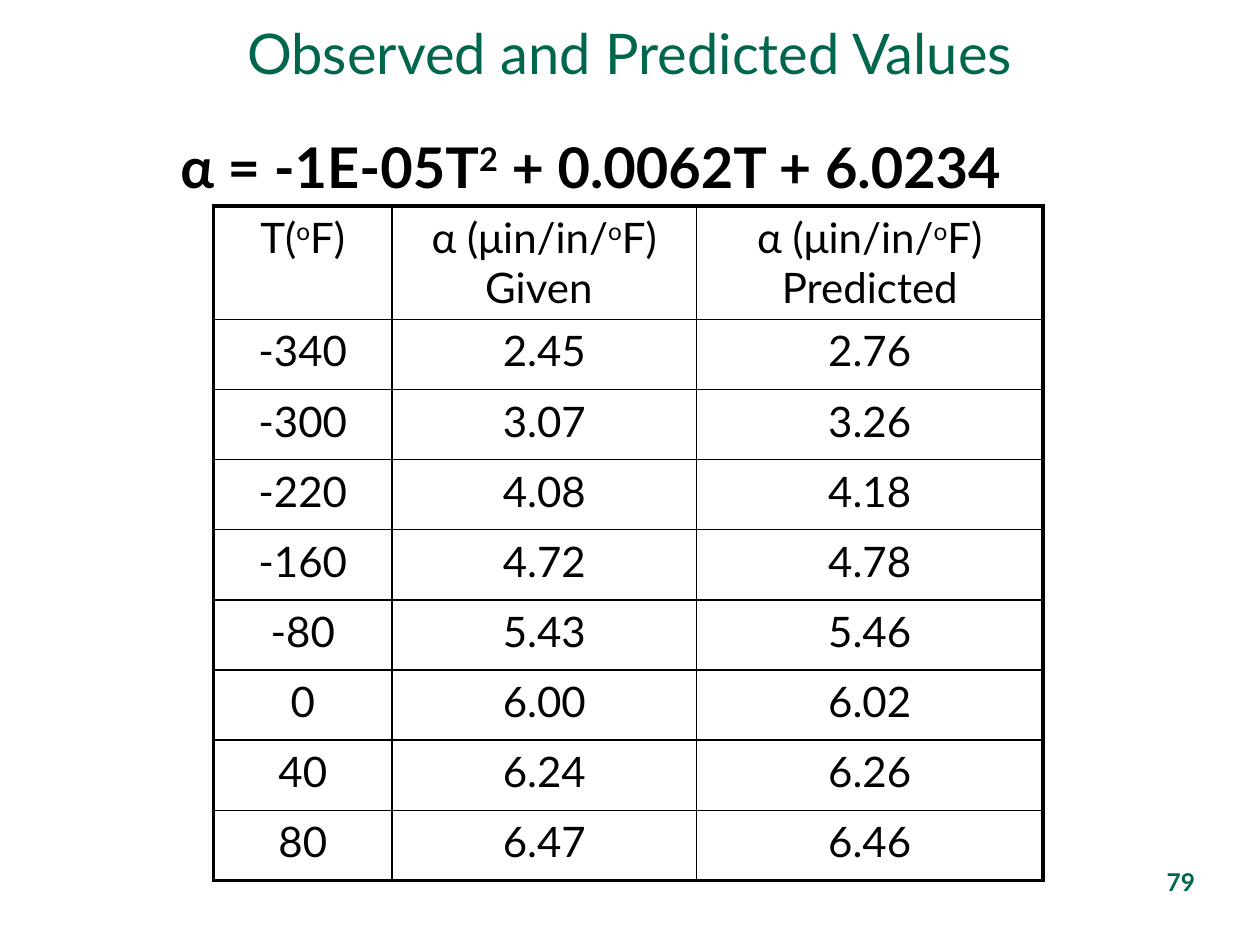
from dataclasses import dataclass

from lxml.etree import SubElement
from pptx import Presentation
from pptx.dml.color import RGBColor
from pptx.enum.text import MSO_ANCHOR, PP_ALIGN
from pptx.oxml.ns import qn
from pptx.util import Pt

TITLE = "Observed and Predicted Values"
EQUATION = [("α = -1E-05T", False), ("2", True), (" + 0.0062T + 6.0234", False)]
EXPANSION_UNIT = [("α (μin/in/", False), ("o", True), ("F)", False)]
HEADERS = [
    [[("T(", False), ("o", True), ("F)", False)]],
    [EXPANSION_UNIT, [("Given ", False)]],
    [EXPANSION_UNIT, [("Predicted", False)]],
]
VALUES = [
    ("-340", "2.45", "2.76"),
    ("-300", "3.07", "3.26"),
    ("-220", "4.08", "4.18"),
    ("-160", "4.72", "4.78"),
    ("-80", "5.43", "5.46"),
    ("0", "6.00", "6.02"),
    ("40", "6.24", "6.26"),
    ("80", "6.47", "6.46"),
]
PAGE_NUMBER = "79"

TITLE_BOX = (36, 0, 648, 60)
EQUATION_BOX = (96, 72, 624, 45)
NUMBER_BOX = (600, 492, 90, 36)
TABLE_LEFT, TABLE_TOP = 122, 117.6
COLUMN_WIDTHS = (102, 174, 198)
HEADER_HEIGHT, ROW_HEIGHT = 64.8, 40.1


@dataclass(frozen=True)
class Theme:
    """Fonts, colours, type sizes and line widths of the slide."""

    font: str = "Lato"
    green: str = "00664D"
    black: str = "000000"
    heading_size: float = 32
    table_size: float = 24
    number_size: float = 14
    outer_line: float = 2.25
    inner_line: float = 1


THEME = Theme()


def write(paragraph, runs, size, color, bold=False, align=PP_ALIGN.LEFT):
    """Add (text, is_superscript) runs to a paragraph."""
    paragraph.alignment = align
    for text, superscript in runs:
        run = paragraph.add_run()
        run.text = text
        run.font.name = THEME.font
        run.font.size = Pt(size)
        run.font.bold = bold
        run.font.color.rgb = RGBColor.from_string(color)
        if superscript:
            run.font._element.set("baseline", "30000")


def add_title(slide):
    """Place and fill the title placeholder."""
    title = slide.shapes.title
    title.left, title.top, title.width, title.height = map(Pt, TITLE_BOX)
    title.text_frame.vertical_anchor = MSO_ANCHOR.MIDDLE
    write(title.text_frame.paragraphs[0], [(TITLE, False)], THEME.heading_size,
          THEME.green, align=PP_ALIGN.CENTER)


def add_text(slide, box, runs, size, color, align=PP_ALIGN.LEFT):
    """Add a bold one-paragraph text box."""
    frame = slide.shapes.add_textbox(*map(Pt, box)).text_frame
    frame.word_wrap = True
    write(frame.paragraphs[0], runs, size, color, True, align)


def add_borders(cell, outer_sides):
    """Draw all four cell borders, heavier on the table's outer sides."""
    properties = cell._tc.get_or_add_tcPr()
    for side, is_outer in outer_sides.items():
        width = THEME.outer_line if is_outer else THEME.inner_line
        line = SubElement(properties, qn(f"a:ln{side}"), w=str(Pt(width)))
        SubElement(SubElement(line, qn("a:solidFill")), qn("a:srgbClr"), val=THEME.black)


def add_values_table(slide):
    """Add the table of given and predicted coefficients."""
    rows = [HEADERS] + [[[[(value, False)]] for value in row] for row in VALUES]
    heights = [HEADER_HEIGHT] + [ROW_HEIGHT] * len(VALUES)
    frame = slide.shapes.add_table(
        len(rows), len(COLUMN_WIDTHS), Pt(TABLE_LEFT), Pt(TABLE_TOP),
        Pt(sum(COLUMN_WIDTHS)), Pt(sum(heights)))
    table = frame.table
    table.first_row = table.horz_banding = False
    for column, width in zip(table.columns, COLUMN_WIDTHS):
        column.width = Pt(width)
    last_row, last_column = len(rows) - 1, len(COLUMN_WIDTHS) - 1
    for row_index, (row, height) in enumerate(zip(rows, heights)):
        table.rows[row_index].height = Pt(height)
        for column_index, lines in enumerate(row):
            cell = table.cell(row_index, column_index)
            add_borders(cell, {
                "L": column_index == 0, "R": column_index == last_column,
                "T": row_index == 0, "B": row_index == last_row})
            cell.fill.background()
            text_frame = cell.text_frame
            for line_index, runs in enumerate(lines):
                paragraph = text_frame.add_paragraph() if line_index else text_frame.paragraphs[0]
                write(paragraph, runs, THEME.table_size, THEME.black, align=PP_ALIGN.CENTER)


def main():
    """Build and save the slide."""
    presentation = Presentation()
    presentation.slide_width, presentation.slide_height = Pt(720), Pt(540)
    slide = presentation.slides.add_slide(presentation.slide_layouts.get_by_name("Title Only"))
    add_text(slide, NUMBER_BOX, [(PAGE_NUMBER, False)], THEME.number_size,
             THEME.green, PP_ALIGN.RIGHT)
    add_title(slide)
    add_values_table(slide)
    add_text(slide, EQUATION_BOX, EQUATION, THEME.heading_size, THEME.black)
    presentation.save("out.pptx")


if __name__ == "__main__":
    main()
